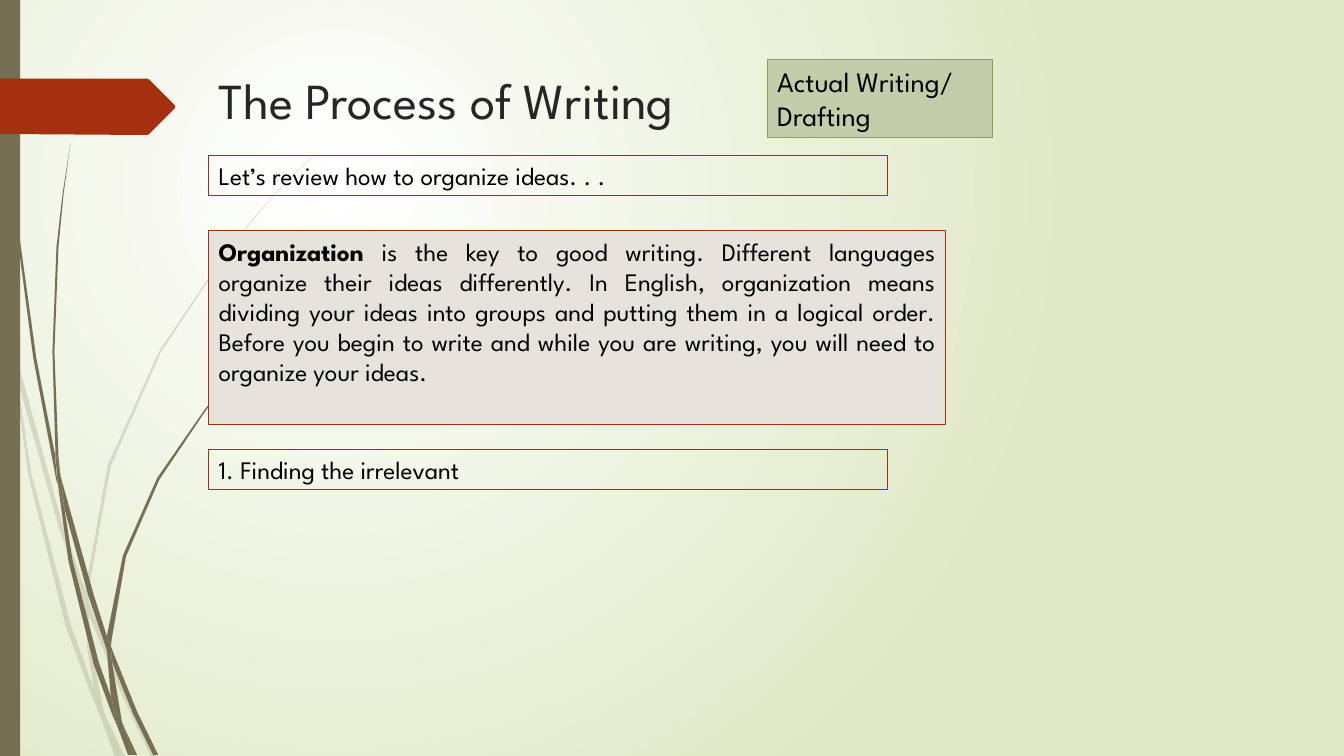
from lxml import etree
from pptx import Presentation, util as u
from pptx.dml.color import RGBColor
from pptx.enum import shapes, text
from pptx.oxml import ns

PX = 9144
OLIVE = RGBColor(0x76, 0x6F, 0x54)
RUST = RGBColor(0xA5, 0x30, 0x10)
SAGE = RGBColor(0xC2, 0xCE, 0xA9)
GREEN = RGBColor(0x8B, 0xA2, 0x49)
STONE = RGBColor(0xE5, 0xE3, 0xDB)
LIME = RGBColor(0xDF, 0xE8, 0xC4)
WHITE = RGBColor(0xFF, 0xFF, 0xFF)
BLACK = RGBColor(0, 0, 0)
DARK = RGBColor(0x26, 0x26, 0x26)

PALE = [
    [(11, 350), (9, 322), (0, 282), (0, 299), (10, 344)],
    [(58, 522), (84, 599), (85, 586), (62, 520), (14, 345), (17, 376)],
    [(92, 607), (88, 596), (88, 610), (123, 694), (150, 751), (155, 751),
     (127, 692)],
    [(119, 751), (124, 751), (105, 711)],
    [(93, 683), (70, 619), (31, 469), (17, 376), (11, 350), (28, 470),
     (65, 621), (92, 693), (101, 714), (99, 707)],
    [(84, 599), (87, 646), (93, 683), (96, 692), (105, 711), (103, 706),
     (91, 646), (88, 610), (88, 608)],
    [(88, 584), (110, 462), (160, 349), (229, 245), (268, 198), (290, 175),
     (312, 154), (312, 153), (289, 175), (268, 197), (228, 244), (158, 348),
     (107, 461), (85, 584), (85, 586), (88, 596)],
    [(101, 714), (114, 751), (119, 751)],
    [(88, 608), (88, 610), (88, 596), (85, 586), (84, 599)],
    [(96, 692), (93, 683), (99, 707), (101, 714), (119, 751), (105, 711)],
]
DEEP = [
    [(7, 110), (17, 233), (33, 355), (56, 477), (57, 481), (55, 457),
     (55, 453), (36, 355), (19, 232), (8, 109), (5, 48), (4, 0), (3, 0),
     (4, 48)],
    [(88, 592), (106, 645), (106, 633), (106, 631), (93, 590), (60, 472),
     (64, 505)],
    [(113, 649), (110, 641), (111, 656), (132, 708), (152, 749), (157, 749),
     (136, 706)],
    [(110, 691), (98, 657), (72, 556), (64, 505), (57, 477), (68, 557),
     (93, 659), (111, 708), (117, 722), (116, 717)],
    [(60, 472), (58, 453), (54, 349), (58, 245), (63, 193), (70, 141),
     (62, 193), (56, 245), (52, 349), (55, 449)],
    [(133, 749), (136, 749), (122, 719)],
    [(57, 477), (64, 505), (60, 472), (55, 449), (55, 453)],
    [(111, 633), (125, 552), (158, 476), (205, 406), (231, 374), (245, 359),
     (261, 344), (260, 344), (245, 358), (231, 373), (204, 405), (156, 474),
     (122, 551), (106, 631), (110, 641)],
    [(117, 722), (127, 749), (131, 749)],
    [(106, 645), (110, 691), (116, 706), (122, 719), (121, 716), (111, 656),
     (109, 651)],
    [(106, 645), (109, 651), (111, 656), (110, 641), (106, 631), (106, 633)],
    [(116, 706), (110, 691), (116, 717), (117, 722), (130, 749), (133, 749),
     (122, 719)],
]
TAG = [(0, 78), (146, 78), (148, 79), (173, 104), (174, 106), (173, 108),
       (148, 133), (146, 134), (0, 133)]


def apply(obj, vals):
    for key, val in vals.items():
        setattr(obj, key, val)


class Deck:
    font = "League Spartan"
    frame = dict(word_wrap=True, vertical_anchor=text.MSO_ANCHOR.TOP,
                 margin_left=10 * PX, margin_right=10 * PX,
                 margin_top=5 * PX, margin_bottom=5 * PX)

    def __init__(self):
        self.prs = Presentation()
        apply(self.prs, dict(slide_width=u.Inches(13.33),
                             slide_height=u.Inches(7.5)))
        self.slide = self.prs.slides.add_slide(self.prs.slide_layouts[5])
        self.tree = self.slide.shapes

    def ground(self, inner, outer):
        fill = self.slide.background.fill
        fill.gradient()
        for stop, pos, tone in zip(fill.gradient_stops, (0, 1), (inner, outer)):
            stop.position = pos
            stop.color.rgb = tone
        lin = next(self.slide.element.iter(ns.qn("a:lin")))
        ring = etree.Element(ns.qn("a:path"), path="circle")
        etree.SubElement(ring, ns.qn("a:fillToRect"), l="50000", t="50000",
                         r="100000", b="100000")
        lin.getparent().replace(lin, ring)

    def paint(self, shape, fill, line=None):
        shape.shadow.inherit = False
        if fill is None:
            shape.fill.background()
        else:
            shape.fill.solid()
            shape.fill.fore_color.rgb = fill
        if line is None:
            shape.line.fill.background()
        else:
            shape.line.color.rgb = line
            shape.line.width = u.Pt(0.75)

    def outline(self, points, fill, alpha=100):
        pen = self.tree.build_freeform(*points[0], scale=PX)
        pen.add_line_segments(points[1:], close=True)
        shape = pen.convert_to_shape()
        self.paint(shape, fill)
        if alpha < 100:
            tone = shape.element.spPr.find(".//" + ns.qn("a:srgbClr"))
            etree.SubElement(tone, ns.qn("a:alpha"), val=str(alpha * 1000))
        return shape

    def wisp(self, parts, alpha=100):
        self.tree.add_group_shape(
            [self.outline(part, OLIVE, alpha) for part in parts])

    def label(self, shape, paras, size, tone, align, fit):
        frame = shape.text_frame
        apply(frame, dict(self.frame, auto_size=fit))
        for i, runs in enumerate(paras):
            para = frame.add_paragraph() if i else frame.paragraphs[0]
            para.alignment = align
            for words, bold in runs:
                run = para.add_run()
                run.text = words
                apply(run.font, dict(name=self.font, size=u.Pt(size), bold=bold))
                run.font.color.rgb = tone

    def title(self, words, *rect):
        shape = self.tree.title
        apply(shape, dict(zip(("left", "top", "width", "height"),
                              (n * PX for n in rect))))
        self.label(shape, [[(words, False)]], 36, DARK, text.PP_ALIGN.LEFT,
                   text.MSO_AUTO_SIZE.NONE)
        shape.element.getparent().append(shape.element)

    def rect(self, area, fill, line=None):
        shape = self.tree.add_shape(shapes.MSO_SHAPE.RECTANGLE,
                                    *(n * PX for n in area))
        self.paint(shape, fill, line)
        return shape

    def box(self, area, paras, fill=None, line=RUST, size=18,
            align=text.PP_ALIGN.LEFT):
        self.label(self.rect(area, fill, line), paras, size, BLACK, align,
                   text.MSO_AUTO_SIZE.SHAPE_TO_FIT_TEXT)


def main():
    deck = Deck()
    deck.ground(WHITE, LIME)
    deck.wisp(PALE, 20)
    deck.wisp(DEEP)
    deck.rect((0, 0, 20, 750), OLIVE)
    deck.outline(TAG, RUST)
    deck.title("The Process of Writing", 207, 64, 975, 73)
    deck.box((761, 59, 223, 77),
             [[("Actual Writing/", False)], [("Drafting", False)]],
             SAGE, GREEN, 20)
    deck.box((207, 229, 731, 192), [[
        ("Organization", True),
        (" is the key to good writing. Different languages organize their "
         "ideas differently. In English, organization means dividing your "
         "ideas into groups and putting them in a logical order. Before you "
         "begin to write and while you are writing, you will need to "
         "organize your ideas. ", False)]],
        STONE, align=text.PP_ALIGN.JUSTIFY)
    deck.box((207, 154, 673, 40),
             [[("Let’s review how to organize ideas. . .", False)]])
    deck.box((207, 446, 673, 40), [[("1. Finding the irrelevant", False)]],
             align=text.PP_ALIGN.JUSTIFY)
    deck.prs.save("out.pptx")


if __name__ == "__main__":
    main()
